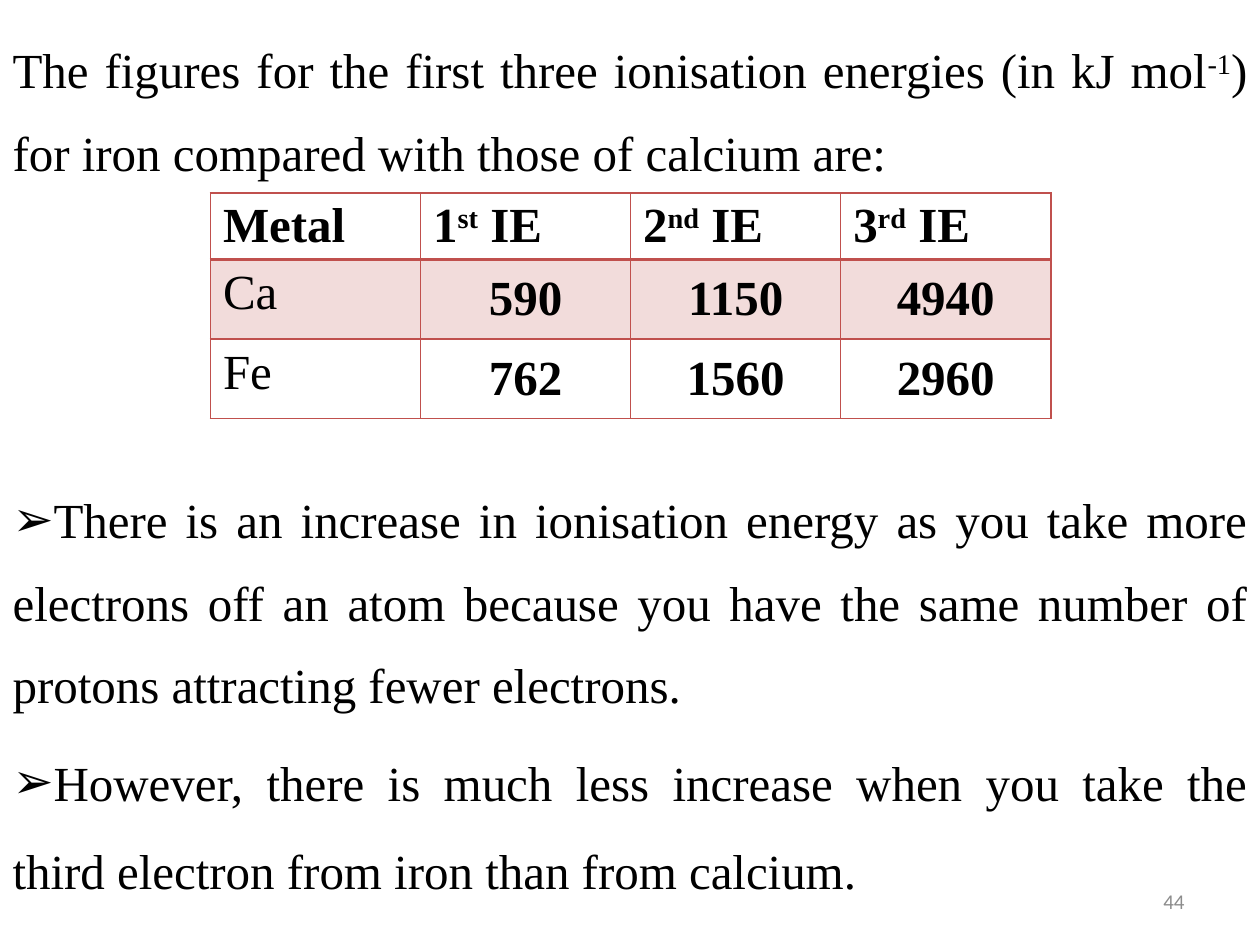
"""Build a slide comparing the ionisation energies of calcium and iron."""
from lxml.etree import SubElement
from pptx import Presentation
from pptx.dml.color import RGBColor
from pptx.enum.text import MSO_ANCHOR, MSO_AUTO_SIZE, PP_ALIGN
from pptx.oxml.ns import qn
from pptx.util import Inches, Pt

COLORS = {"text": "000000", "border": "C0504D", "band": "F2DCDB", "number": "8C8C8C"}
SERIF = "Times New Roman"
INTRO = [
    ("The figures for the first three ionisation energies (in kJ mol", False),
    ("-1", True),
    (") for iron compared with those of calcium are:", False),
]
BULLETS = [
    ("There is an increase in ionisation energy as you take more electrons off an atom "
     "because you have the same number of protons attracting fewer electrons.", 1.4, 163),
    ("However, there is much less increase when you take the third electron from iron "
     "than from calcium.", 1.5, 5.6),
]
HEADERS = [
    [("Metal", False)],
    *[[(number, False), (suffix, True), (" IE", False)]
      for number, suffix in (("1", "st"), ("2", "nd"), ("3", "rd"))],
]
ENERGIES = [("Ca", "590", "1150", "4940"), ("Fe", "762", "1560", "2960")]


def set_attributes(target, values):
    """Set each named attribute of the target."""
    for name, value in values.items():
        setattr(target, name, value)


def add_runs(paragraph, pieces, bold=False, size=28, font=SERIF, color="text"):
    """Add (text, is_superscript) pieces to a paragraph."""
    for text, is_superscript in pieces:
        run = paragraph.add_run()
        run.text = text
        set_attributes(run.font, {"name": font, "size": Pt(size), "bold": bold})
        run.font.color.rgb = RGBColor.from_string(COLORS[color])
        if is_superscript:
            run.font._element.set("baseline", "30000")


def format_body_paragraph(paragraph, line_spacing, space_before, bullet=None):
    """Justify a body paragraph and give it spacing and an optional bullet."""
    set_attributes(paragraph, {"alignment": PP_ALIGN.JUSTIFY, "line_spacing": line_spacing,
                               "space_before": Pt(space_before)})
    if bullet:
        SubElement(paragraph._p.get_or_add_pPr(), qn("a:buChar"), char=bullet)


def add_body(slide):
    """Fill the subtitle placeholder with the introduction and the bullets."""
    body = slide.placeholders[1]
    set_attributes(body, {"left": Inches(0), "top": Inches(0.08),
                          "width": Inches(10), "height": Inches(7.42)})
    frame = body.text_frame
    set_attributes(frame, {"word_wrap": True, "auto_size": MSO_AUTO_SIZE.NONE,
                           "vertical_anchor": MSO_ANCHOR.TOP})
    paragraph = frame.paragraphs[0]
    format_body_paragraph(paragraph, 1.4, 0)
    add_runs(paragraph, INTRO)
    for text, line_spacing, space_before in BULLETS:
        paragraph = frame.add_paragraph()
        format_body_paragraph(paragraph, line_spacing, space_before, "➢")
        add_runs(paragraph, [(text, False)])


def set_borders(cell, widths):
    """Draw the cell borders, given in points by side."""
    properties = cell._tc.get_or_add_tcPr()
    for position, (side, width) in enumerate(widths.items()):
        line = SubElement(properties, qn(f"a:ln{side}"), w=str(Pt(width)))
        fill = SubElement(line, qn("a:solidFill"))
        SubElement(fill, qn("a:srgbClr"), val=COLORS["border"])
        properties.insert(position, line)


def format_cell(cell, row, pieces, is_value):
    """Write one table cell with its fill, borders and alignment."""
    paragraph = cell.text_frame.paragraphs[0]
    add_runs(paragraph, pieces, bold=row == 0 or is_value)
    if is_value:
        paragraph.alignment = PP_ALIGN.CENTER
        set_attributes(cell, {"vertical_anchor": MSO_ANCHOR.MIDDLE,
                              "margin_top": Inches(0.1), "margin_bottom": Inches(0.1)})
    if row == 1:
        cell.fill.solid()
        cell.fill.fore_color.rgb = RGBColor.from_string(COLORS["band"])
    else:
        cell.fill.background()
    set_borders(cell, {"L": 1, "R": 1, "T": 2 if row == 1 else 1, "B": 2 if row == 0 else 1})


def add_energy_table(slide):
    """Add the table of ionisation energies."""
    rows = [HEADERS] + [[[(text, False)] for text in energies] for energies in ENERGIES]
    table = slide.shapes.add_table(len(rows), len(HEADERS), Inches(1.67), Inches(1.53),
                                   Inches(6.67), Inches(1.8)).table
    set_attributes(table, {"first_row": False, "horz_banding": False})
    for row, cells in enumerate(rows):
        table.rows[row].height = Inches(0.53 if row == 0 else 0.63)
        for column, pieces in enumerate(cells):
            format_cell(table.cell(row, column), row, pieces, row > 0 and column > 0)


def add_slide_number(slide):
    """Add the slide number at the bottom right."""
    frame = slide.shapes.add_textbox(Inches(7.17), Inches(6.95),
                                     Inches(2.33), Inches(0.4)).text_frame
    set_attributes(frame, {"word_wrap": True, "vertical_anchor": MSO_ANCHOR.MIDDLE})
    paragraph = frame.paragraphs[0]
    paragraph.alignment = PP_ALIGN.RIGHT
    add_runs(paragraph, [("44", False)], size=12, font="Calibri", color="number")


def main():
    """Create and save the presentation."""
    presentation = Presentation()
    set_attributes(presentation, {"slide_width": Inches(10), "slide_height": Inches(7.5)})
    slide = presentation.slides.add_slide(presentation.slide_layouts[0])
    title = slide.shapes.title._element
    title.getparent().remove(title)
    add_body(slide)
    add_energy_table(slide)
    add_slide_number(slide)
    presentation.save("out.pptx")


if __name__ == "__main__":
    main()
